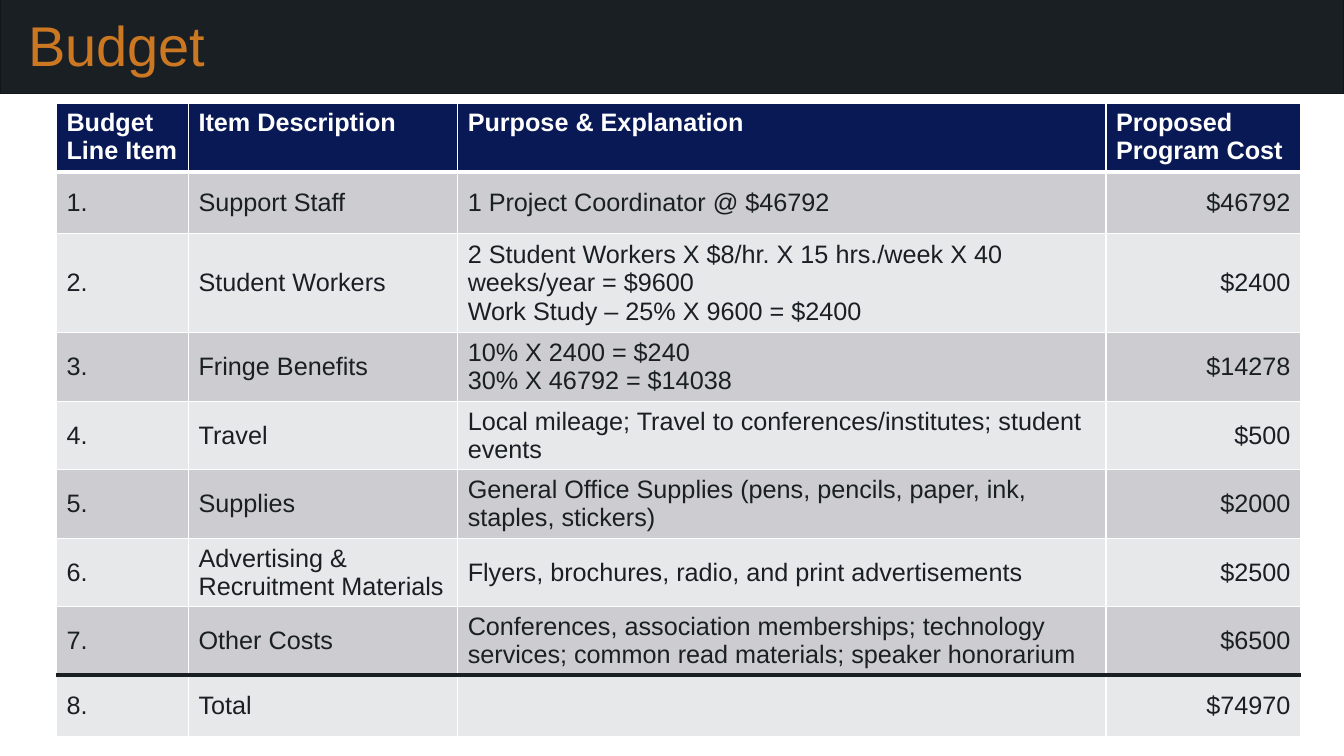
from lxml.etree import SubElement
from pptx import Presentation
from pptx.dml.color import RGBColor
from pptx.enum.shapes import MSO_SHAPE as Shape
from pptx.enum.text import MSO_ANCHOR as Anchor, PP_ALIGN as Align
from pptx.oxml.ns import qn
from pptx.util import Inches, Pt

TITLE = "Budget"
HEADINGS = ["Budget Line Item", "Item Description", "Purpose & Explanation", "Proposed Program Cost"]
BUDGET_LINES = [
    ("Support Staff", ["1 Project Coordinator @ $46792"], "$46792"),
    ("Student Workers", ["2 Student Workers X $8/hr. X 15 hrs./week X 40 weeks/year = $9600",
                         "Work Study – 25% X 9600 = $2400"], "$2400"),
    ("Fringe Benefits", ["10% X 2400 = $240", "30% X 46792 = $14038"], "$14278"),
    ("Travel", ["Local mileage; Travel to conferences/institutes; student events"], "$500"),
    ("Supplies", ["General Office Supplies (pens, pencils, paper, ink, staples, stickers)"], "$2000"),
    ("Advertising & Recruitment Materials", ["Flyers, brochures, radio, and print advertisements"], "$2500"),
    ("Other Costs", ["Conferences, association memberships; technology services; "
                     "common read materials; speaker honorarium"], "$6500"),
    ("Total", [], "$74970"),
]
COLUMN_WIDTHS = [1.31, 2.67, 6.43, 1.93]
ROW_HEIGHTS = [0.68, 0.61, 0.98] + [0.68] * 5 + [0.61]
COLORS = {"ink": "1A1F24", "edge": "13171B", "title": "CC7722", "header": "091955",
          "odd": "CCCCD1", "even": "E7E8E9", "white": "FFFFFF"}
FONT = "Arial"


def color(name):
    return RGBColor.from_string(COLORS[name])


def write(paragraph, text, size, ink, bold=False):
    run = paragraph.add_run()
    run.text = text
    run.font.name, run.font.size, run.font.bold = FONT, Pt(size), bold
    run.font.color.rgb = color(ink)


def set_borders(cell, top, bottom):
    thin = ("white", 1)
    properties = cell._tc.get_or_add_tcPr()
    sides = [("L", thin), ("R", thin), ("T", top), ("B", bottom)]
    for position, (side, (ink, width)) in enumerate(sides):
        border = SubElement(properties, qn(f"a:ln{side}"), w=str(Pt(width)))
        SubElement(SubElement(border, qn("a:solidFill")), qn("a:srgbClr"), val=COLORS[ink])
        properties.insert(position, border)


def fill_cell(cell, lines, row, column):
    heading = row == 0
    cell.fill.solid()
    cell.fill.fore_color.rgb = color("header" if heading else "odd" if row % 2 else "even")
    cell.vertical_anchor = Anchor.TOP if heading else Anchor.MIDDLE
    cell.margin_left = cell.margin_right = Inches(0.1)
    cell.margin_top = cell.margin_bottom = Inches(0.05)
    frame = cell.text_frame
    for index, line in enumerate(lines):
        paragraph = frame.add_paragraph() if index else frame.paragraphs[0]
        if not heading and column == len(HEADINGS) - 1:
            paragraph.alignment = Align.RIGHT
        write(paragraph, line, 18, "white" if heading else "ink", heading)
    if not lines:
        frame.paragraphs[0].font.size = Pt(18)
    total = len(BUDGET_LINES)
    rules = {0: ("white", 3), total - 1: ("ink", 3)}
    set_borders(cell, rules.get(row - 1, ("white", 1)), rules.get(row, ("white", 1)))


def add_budget(slide):
    rows = [[[heading] for heading in HEADINGS]]
    for number, (item, purpose, cost) in enumerate(BUDGET_LINES, 1):
        rows.append([[f"{number}."], [item], purpose, [cost]])
    budget = slide.shapes.add_table(
        len(rows), len(HEADINGS), Inches(0.56), Inches(1.03),
        Inches(sum(COLUMN_WIDTHS)), Inches(sum(ROW_HEIGHTS))).table
    for column, width in zip(budget.columns, COLUMN_WIDTHS):
        column.width = Inches(width)
    for row, height in zip(budget.rows, ROW_HEIGHTS):
        row.height = Inches(height)
    for row, cells in enumerate(rows):
        for column, lines in enumerate(cells):
            fill_cell(budget.cell(row, column), lines, row, column)


def add_title(slide):
    band = slide.shapes.add_shape(Shape.RECTANGLE, 0, Inches(-0.07), Inches(13.33), Inches(1))
    band.shadow.inherit = False
    band.fill.solid()
    band.fill.fore_color.rgb = color("ink")
    band.line.color.rgb = color("edge")
    band.line.width = Pt(1)
    title = slide.shapes.add_textbox(Inches(0.18), Inches(0.06), Inches(12.89), Inches(0.77))
    title.text_frame.word_wrap = True
    write(title.text_frame.paragraphs[0], TITLE, 40, "title")


def main():
    deck = Presentation()
    deck.slide_width, deck.slide_height = Inches(13.33), Inches(7.5)
    slide = deck.slides.add_slide(deck.slide_layouts[6])
    add_budget(slide)
    add_title(slide)
    deck.save("out.pptx")


if __name__ == "__main__":
    main()
